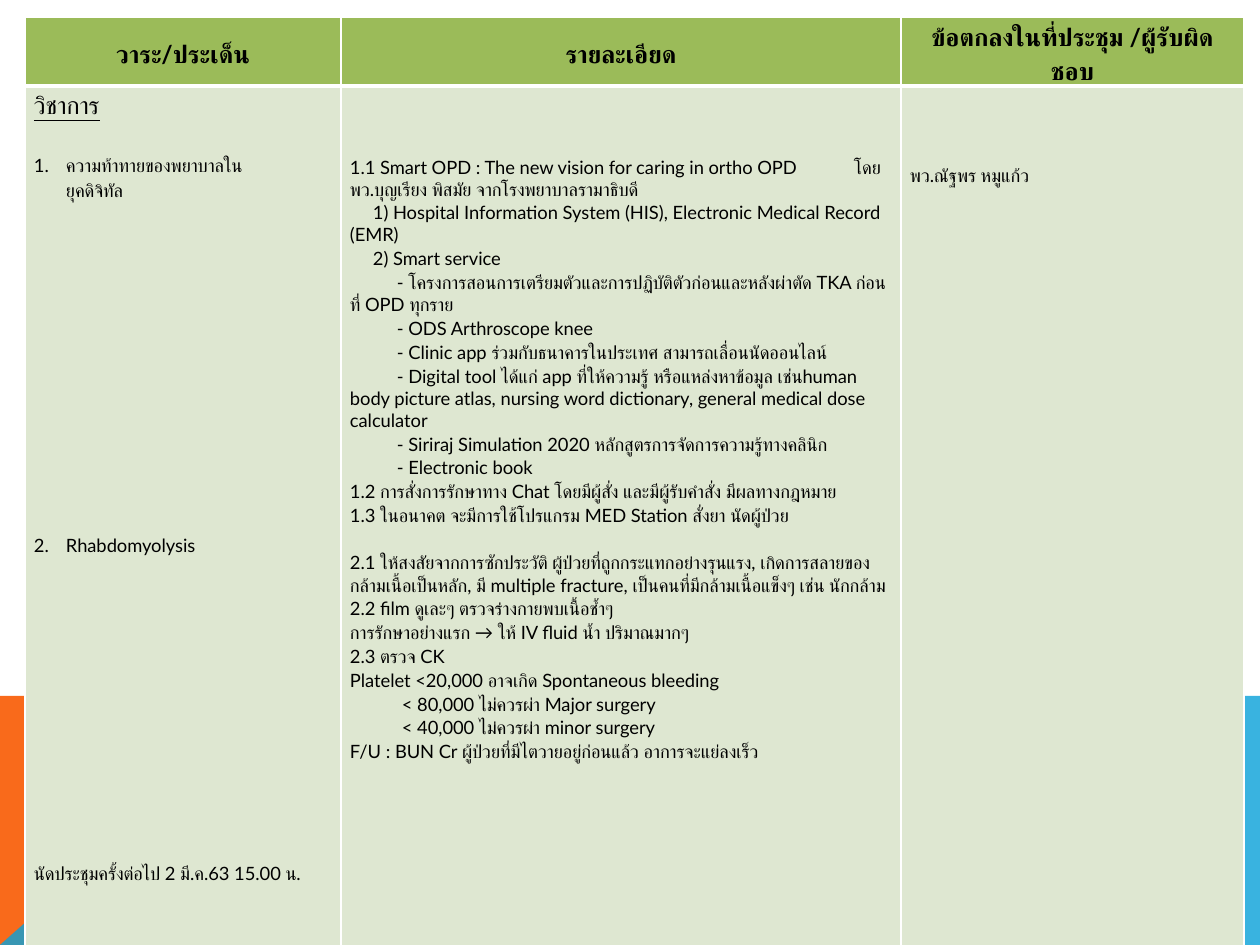
from dataclasses import dataclass

from lxml.etree import SubElement
from pptx import Presentation
from pptx.dml.color import RGBColor
from pptx.enum.text import MSO_ANCHOR, PP_ALIGN
from pptx.oxml.ns import qn
from pptx.util import Pt


@dataclass(frozen=True)
class Theme:
    font: str = "Lato"
    ink: str = "000000"
    line: str = "FFFFFF"
    head: str = "9BBB59"
    body: str = "DEE7D1"
    left: str = "F96A1B"
    right: str = "08A1D9"
    large: float = 14
    small: float = 10.5


@dataclass(frozen=True)
class Para:
    text: str
    size: float = Theme.small
    bold: bool = False
    under: bool = False
    align: PP_ALIGN = PP_ALIGN.LEFT
    lead: float = 1.15
    gap: float = 0
    after: float = 0
    left: int = 0
    first: int = 0
    number: bool = False
    tab: int = 0


THEME = Theme()
WIDE, HIGH = 1260, 945
COLS = [316, 560, 343]
ROWS = [69, 902]
HEADS = ["วาระ/ประเด็น", "รายละเอียด", "ข้อตกลงในที่ประชุม /ผู้รับผิดชอบ"]
STEP, DEEP, LIMIT = 23, 47, 52
TOPICS = [
    Para("วิชาการ", THEME.large, under=True, after=18),
    Para("ความท้าทายของพยาบาลใน\vยุคดิจิทัล", left=32, first=-32, number=True, after=188),
    Para("Rhabdomyolysis", left=32, first=-32, number=True, after=173),
    Para("นัดประชุมครั้งต่อไป 2 มี.ค.63 15.00 น."),
]
DETAILS = [
    (0, "1.1 Smart OPD : The new vision for caring in ortho OPD\tโดย พว.บุญเรียง พิสมัย จากโรงพยาบาลรามาธิบดี"),
    (STEP, "1) Hospital Information System (HIS), Electronic Medical Record (EMR)"),
    (STEP, "2) Smart service"),
    (DEEP, "- โครงการสอนการเตรียมตัวและการปฏิบัติตัวก่อนและหลังผ่าตัด TKA ก่อนที่ OPD ทุกราย"),
    (DEEP, "- ODS Arthroscope knee"),
    (DEEP, "- Clinic app ร่วมกับธนาคารในประเทศ สามารถเลื่อนนัดออนไลน์"),
    (DEEP, "- Digital tool ได้แก่ app ที่ให้ความรู้ หรือแหล่งหาข้อมูล เช่นhuman "
           "body picture atlas, nursing word dictionary, general medical dose calculator"),
    (DEEP, "- Siriraj Simulation 2020 หลักสูตรการจัดการความรู้ทางคลินิก"),
    (DEEP, "- Electronic book"),
    (0, "1.2 การสั่งการรักษาทาง Chat โดยมีผู้สั่ง และมีผู้รับคำสั่ง มีผลทางกฎหมาย"),
    (0, "1.3 ในอนาคต จะมีการใช้โปรแกรม MED Station สั่งยา นัดผู้ป่วย"),
    (0, "2.1 ให้สงสัยจากการซักประวัติ ผู้ป่วยที่ถูกกระแทกอย่างรุนแรง, เกิดการสลายของกล้ามเนื้อเป็นหลัก, "
        "มี multiple fracture, เป็นคนที่มีกล้ามเนื้อแข็งๆ เช่น นักกล้าม"),
    (0, "2.2 film ดูเละๆ ตรวจร่างกายพบเนื้อช้ำๆ"),
    (0, "การรักษาอย่างแรก → ให้ IV fluid น้ำ ปริมาณมากๆ"),
    (0, "2.3 ตรวจ CK"),
    (0, "Platelet <20,000 อาจเกิด Spontaneous bleeding"),
    (LIMIT, "< 80,000 ไม่ควรผ่า Major surgery"),
    (LIMIT, "< 40,000 ไม่ควรผ่า minor surgery"),
    (0, "F/U : BUN Cr ผู้ป่วยที่มีไตวายอยู่ก่อนแล้ว อาการจะแย่ลงเร็ว"),
]


def px(count):
    return round(count * 914400 / 126)


def tint(fill, color):
    fill.solid()
    fill.fore_color.rgb = RGBColor.from_string(color)


def add_wedge(slide, points, color, alpha=None):
    maker = slide.shapes.build_freeform(*points[0], scale=px(1))
    maker.add_line_segments(points[1:])
    wedge = maker.convert_to_shape()
    wedge.shadow.inherit = False
    wedge.line.fill.background()
    tint(wedge.fill, color)
    if alpha:
        tone = wedge._element.spPr.find(".//" + qn("a:srgbClr"))
        SubElement(tone, qn("a:alpha"), val=str(alpha * 1000))


def add_run(line, text, para):
    run = line.add_run()
    run.text = text
    font = run.font
    font.name = THEME.font
    font.size = Pt(para.size)
    font.bold = para.bold
    font.underline = para.under
    tint(font.fill, THEME.ink)
    SubElement(run._r.get_or_add_rPr(), qn("a:cs"), typeface=THEME.font)


def add_para(line, para):
    line.alignment = para.align
    line.line_spacing = para.lead
    if para.gap:
        line.space_before = Pt(para.gap)
    line.space_after = Pt(para.after)
    props = line._p.get_or_add_pPr()
    props.set("marL", str(px(para.left)))
    props.set("indent", str(px(para.first)))
    if para.number:
        SubElement(props, qn("a:buAutoNum"), type="arabicPeriod")
    if para.tab:
        tabs = SubElement(props, qn("a:tabLst"))
        SubElement(tabs, qn("a:tab"), pos=str(px(para.tab)), algn="l")
    for index, part in enumerate(para.text.split("\v")):
        if index:
            line.add_line_break()
        add_run(line, part, para)


def add_edge(cell, side, width):
    props = cell._tc.get_or_add_tcPr()
    edge = SubElement(props, qn("a:ln" + side), w=str(Pt(width)))
    fill = SubElement(edge, qn("a:solidFill"))
    SubElement(fill, qn("a:srgbClr"), val=THEME.line)


def fill_cell(cell, paras, color, edges, anchor, top=0):
    cell.margin_left = cell.margin_right = px(9)
    cell.margin_top, cell.margin_bottom = px(top), 0
    cell.vertical_anchor = anchor
    for side, width in zip("LRTB", edges):
        add_edge(cell, side, width)
    tint(cell.fill, color)
    frame = cell.text_frame
    for index, para in enumerate(paras):
        add_para(frame.add_paragraph() if index else frame.paragraphs[0], para)


def add_grid(slide):
    frame = slide.shapes.add_table(
        len(ROWS), len(COLS), px(25), px(17), px(sum(COLS)), px(sum(ROWS)))
    grid = frame.table
    grid.first_row = grid.horz_banding = False
    for col, width in zip(grid.columns, COLS):
        col.width = px(width)
    for row, height in zip(grid.rows, ROWS):
        row.height = px(height)
    return grid


def list_details():
    return [
        Para(text, lead=1.0, gap=1 if index else 0, first=first,
             after=13.5 if text.startswith("1.3") else 0,
             tab=508 if "\t" in text else 0)
        for index, (first, text) in enumerate(DETAILS)
    ]


def main():
    deck = Presentation()
    deck.slide_width, deck.slide_height = px(WIDE), px(HIGH)
    slide = deck.slides.add_slide(deck.slide_layouts[6])
    add_wedge(slide, [(0, HIGH), (0, 696), (281, 696), (493, HIGH), (0, HIGH)], THEME.left)
    add_wedge(slide, [(0, HIGH), (281, 696), (WIDE, 696), (WIDE, HIGH), (0, HIGH)],
              THEME.right, 80)
    grid = add_grid(slide)
    for col, text in enumerate(HEADS):
        head = Para(text, THEME.large, bold=True, align=PP_ALIGN.CENTER)
        fill_cell(grid.cell(0, col), [head], THEME.head, (1, 1, 1, 3), MSO_ANCHOR.MIDDLE)
    bodies = [(TOPICS, 0), (list_details(), 70), ([Para("พว.ณัฐพร หมูแก้ว")], 75)]
    for col, (paras, top) in enumerate(bodies):
        fill_cell(grid.cell(1, col), paras, THEME.body, (1, 1, 3, 1), MSO_ANCHOR.TOP, top)
    deck.save("out.pptx")


if __name__ == "__main__":
    main()
